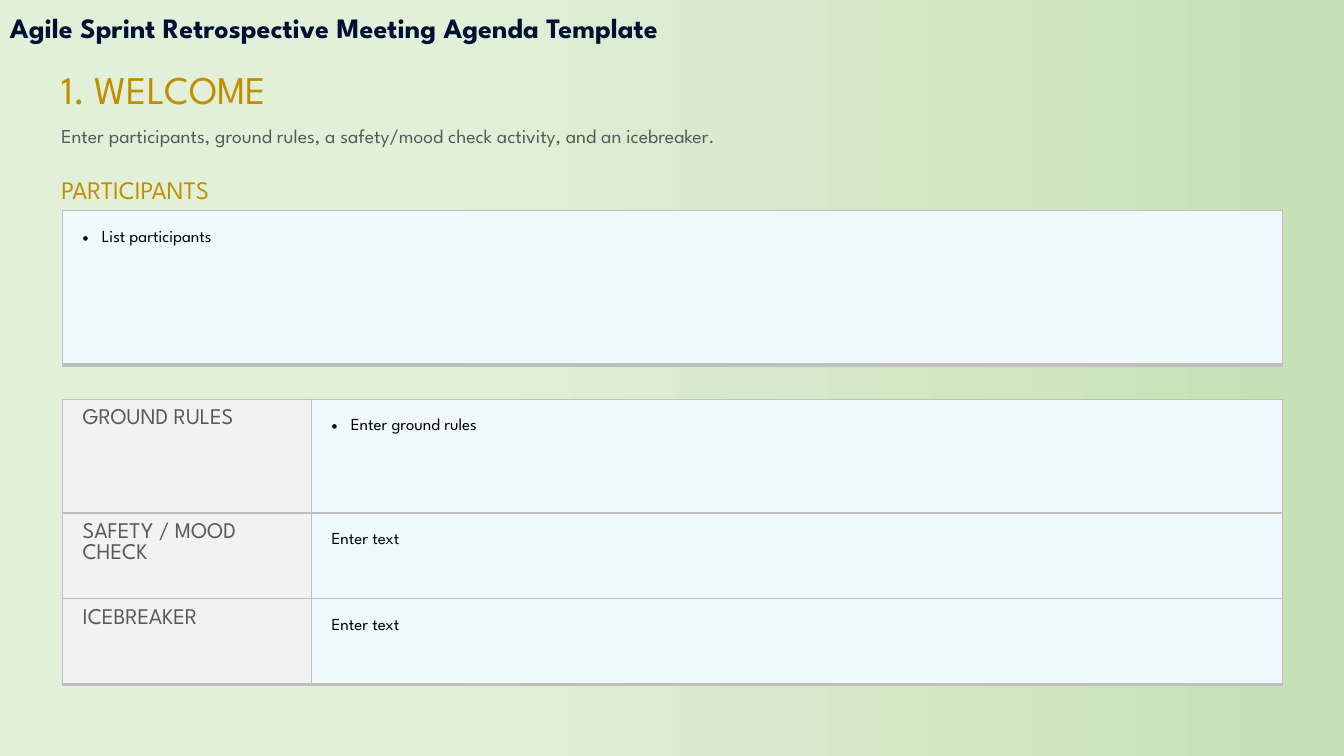
from dataclasses import dataclass

from lxml import etree
from pptx import Presentation
from pptx import util as u
from pptx.dml.color import RGBColor
from pptx.enum import text
from pptx.oxml import ns

FONT = "League Spartan"
COLORS = {
    "navy": "001033", "gold": "BF8F00", "gray": "595959", "black": "000000",
    "border": "BFBFBF", "label": "F2F2F2", "entry": "EFF9FB",
    "green": "C5E0B4", "pale_green": "E2F0D9",
}


@dataclass
class Heading:
    text: str
    left: float
    top: float
    width: float
    height: float
    size: float
    color: str
    bold: bool = False
    wrap: bool = True
    inset: float = 0.05
    middle: bool = False


@dataclass
class Entry:
    text: str
    is_label: bool = False
    bullet: bool = False


@dataclass
class Grid:
    top: float
    columns: list[float]
    row_heights: list[float]
    rows: list[list[Entry]]
    bottom_line: float


HEADINGS = [
    Heading("Enter participants, ground rules, a safety/mood check activity, and an icebreaker.",
            0.51, 1.18, 9.2, 0.34, 14, "gray", middle=True),
    Heading("1. WELCOME", 0.51, 0.6, 2.64, 0.57, 28, "gold", wrap=False),
    Heading("Agile Sprint Retrospective Meeting Agenda Template",
            0, 0, 12.1, 0.54, 20, "navy", bold=True, inset=0.1),
    Heading("PARTICIPANTS", 0.51, 1.68, 1.88, 0.4, 18, "gold", wrap=False),
]
GRIDS = [
    Grid(2.09, [12.1], [1.53], [[Entry("List participants", bullet=True)]], 3),
    Grid(3.96, [2.47, 9.63], [1.13, 0.85, 0.85], [
        [Entry("GROUND RULES", is_label=True), Entry("Enter ground rules", bullet=True)],
        [Entry("SAFETY / MOOD CHECK", is_label=True), Entry("Enter text")],
        [Entry("ICEBREAKER", is_label=True), Entry("Enter text")],
    ], 2.25),
]
GRID_LEFT = 0.62


def rgb(name: str) -> RGBColor:
    return RGBColor.from_string(COLORS[name])


def write(tf, words: str, *, size: float, color: str, bold: bool = False,
          leading: float | None = None, bullet: bool = False) -> None:
    p = tf.paragraphs[0]
    if leading:
        p.line_spacing = u.Pt(leading)
    if bullet:
        pPr = p._p.get_or_add_pPr()
        indent = u.Inches(0.19)
        pPr.set("marL", str(indent))
        pPr.set("indent", str(-indent))
        etree.SubElement(pPr, ns.qn("a:buFont"), typeface="Arial")
        etree.SubElement(pPr, ns.qn("a:buChar"), char="•")
    r = p.add_run()
    r.text = words
    r.font.name = FONT
    r.font.size = u.Pt(size)
    r.font.bold = bold
    r.font.color.rgb = rgb(color)


def set_borders(cell, bottom: float) -> None:
    """Draw 1 pt borders, with the bottom one in its own width."""
    tcPr = cell._tc.get_or_add_tcPr()
    widths = {"lnL": 1, "lnR": 1, "lnT": 1, "lnB": bottom}
    for i, (side, width) in enumerate(widths.items()):
        ln = etree.Element(ns.qn(f"a:{side}"), w=str(u.Pt(width)))
        fill = etree.SubElement(ln, ns.qn("a:solidFill"))
        etree.SubElement(fill, ns.qn("a:srgbClr"), val=COLORS["border"])
        tcPr.insert(i, ln)


def fill_cell(cell, entry: Entry, bottom: float) -> None:
    cell.margin_left = u.Inches(0.2)
    cell.margin_top = cell.margin_right = cell.margin_bottom = u.Inches(0.1)
    cell.fill.solid()
    cell.fill.fore_color.rgb = rgb("label" if entry.is_label else "entry")
    set_borders(cell, bottom)
    if entry.is_label:
        write(cell.text_frame, entry.text, size=16, color="gray")
    else:
        write(cell.text_frame, entry.text, size=12, color="black",
              leading=18, bullet=entry.bullet)


def add_grid(s, grid: Grid) -> None:
    table = s.shapes.add_table(
        len(grid.rows), len(grid.columns), u.Inches(GRID_LEFT), u.Inches(grid.top),
        u.Inches(sum(grid.columns)), u.Inches(sum(grid.row_heights))).table
    table.first_row = table.horz_banding = False
    for column, width in zip(table.columns, grid.columns):
        column.width = u.Inches(width)
    for row, height in zip(table.rows, grid.row_heights):
        row.height = u.Inches(height)
    last = len(grid.rows) - 1
    for i, entries in enumerate(grid.rows):
        for j, entry in enumerate(entries):
            fill_cell(table.cell(i, j), entry, grid.bottom_line if i == last else 1)


def add_heading(s, h: Heading) -> None:
    box = s.shapes.add_textbox(*map(u.Inches, (h.left, h.top, h.width, h.height)))
    tf = box.text_frame
    tf.word_wrap = h.wrap
    tf.auto_size = text.MSO_AUTO_SIZE.SHAPE_TO_FIT_TEXT
    tf.margin_top = tf.margin_bottom = u.Inches(h.inset)
    tf.vertical_anchor = text.MSO_ANCHOR.MIDDLE if h.middle else text.MSO_ANCHOR.TOP
    write(tf, h.text, size=h.size, color=h.color, bold=h.bold)


def paint_background(s) -> None:
    fill = s.background.fill
    fill.gradient()
    fill.gradient_angle = 180
    for stop, (position, color) in zip(fill.gradient_stops,
                                       [(0, "green"), (0.69, "pale_green")]):
        stop.position = position
        stop.color.rgb = rgb(color)


def main() -> None:
    prs = Presentation()
    prs.slide_width, prs.slide_height = u.Inches(13.33), u.Inches(7.5)
    s = prs.slides.add_slide(prs.slide_layouts[6])
    paint_background(s)
    for grid in GRIDS:
        add_grid(s, grid)
    for heading in HEADINGS:
        add_heading(s, heading)
    prs.save("out.pptx")


if __name__ == "__main__":
    main()
